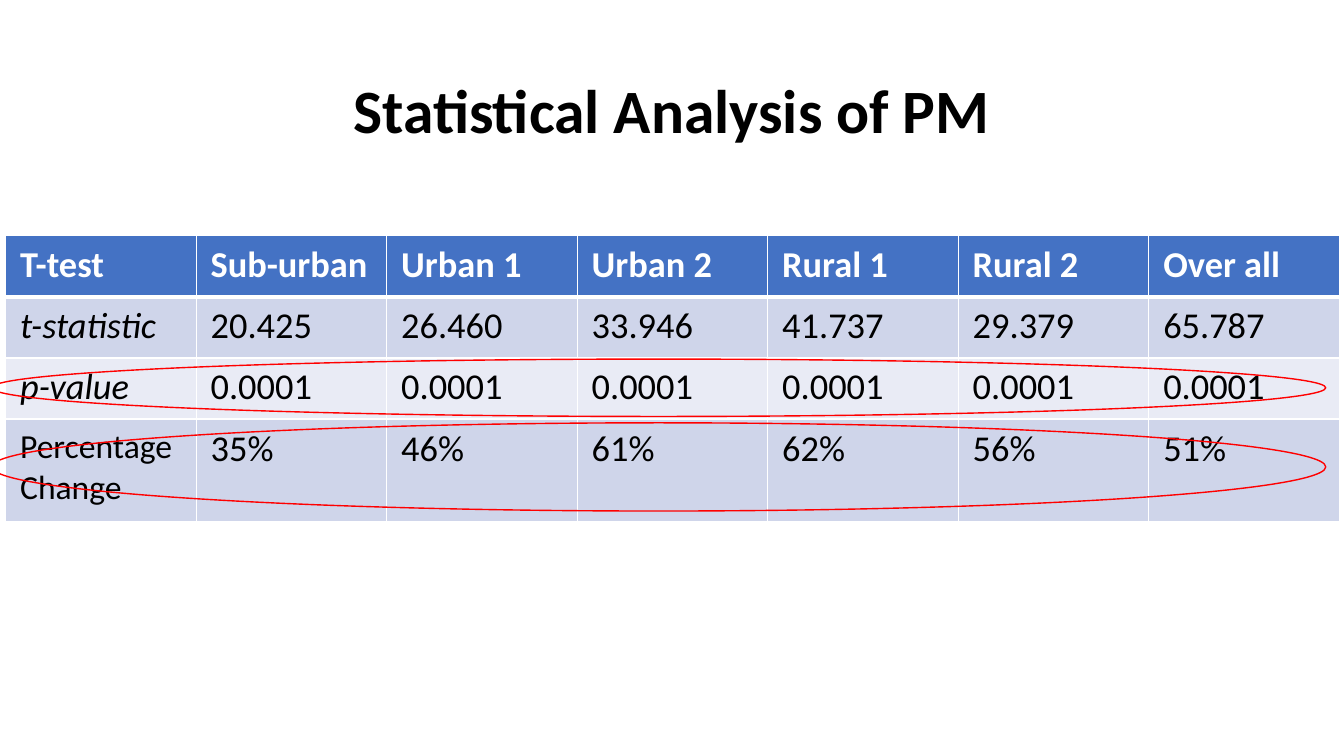
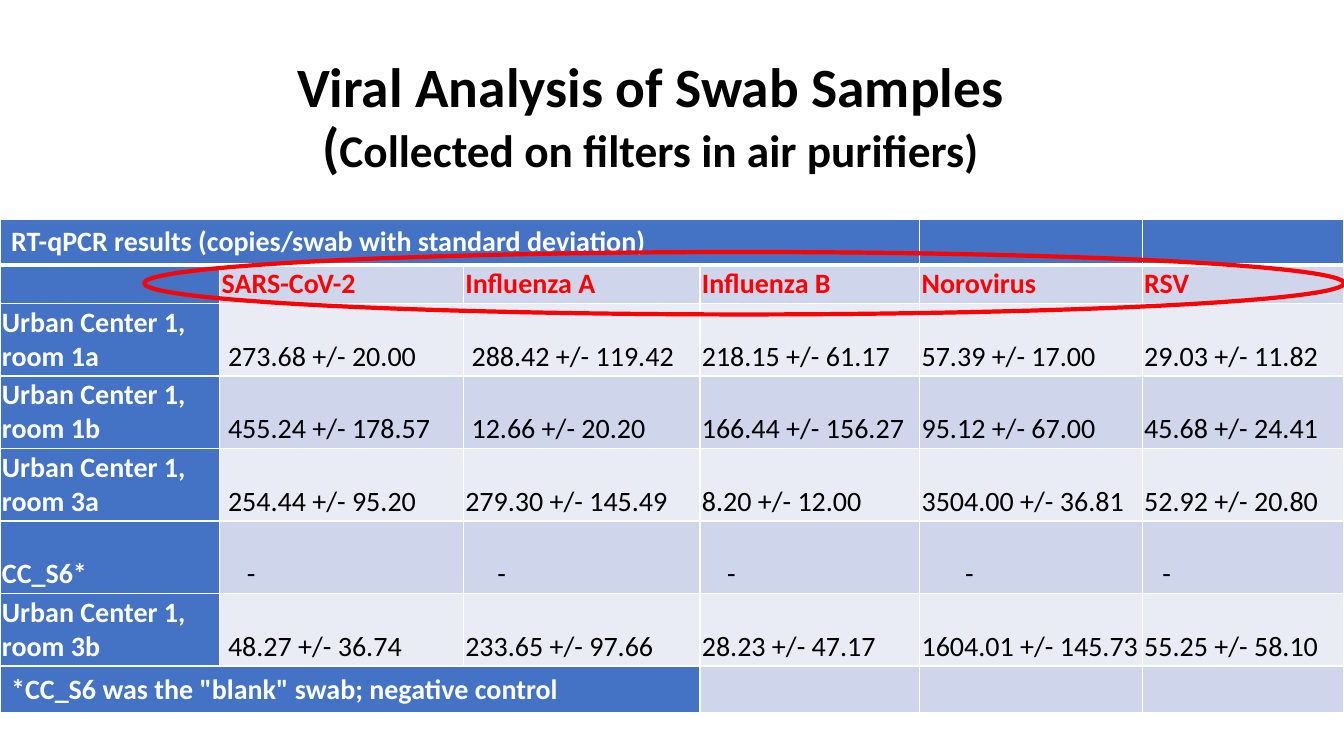
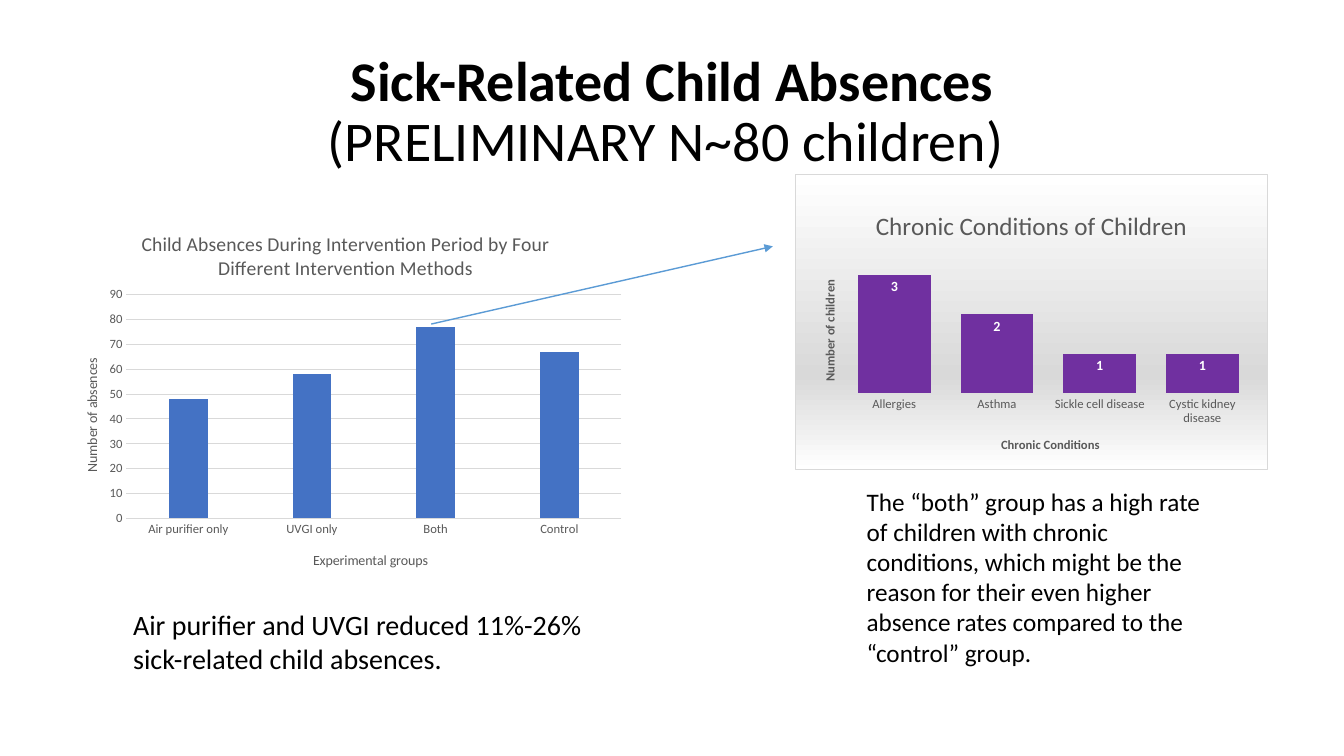
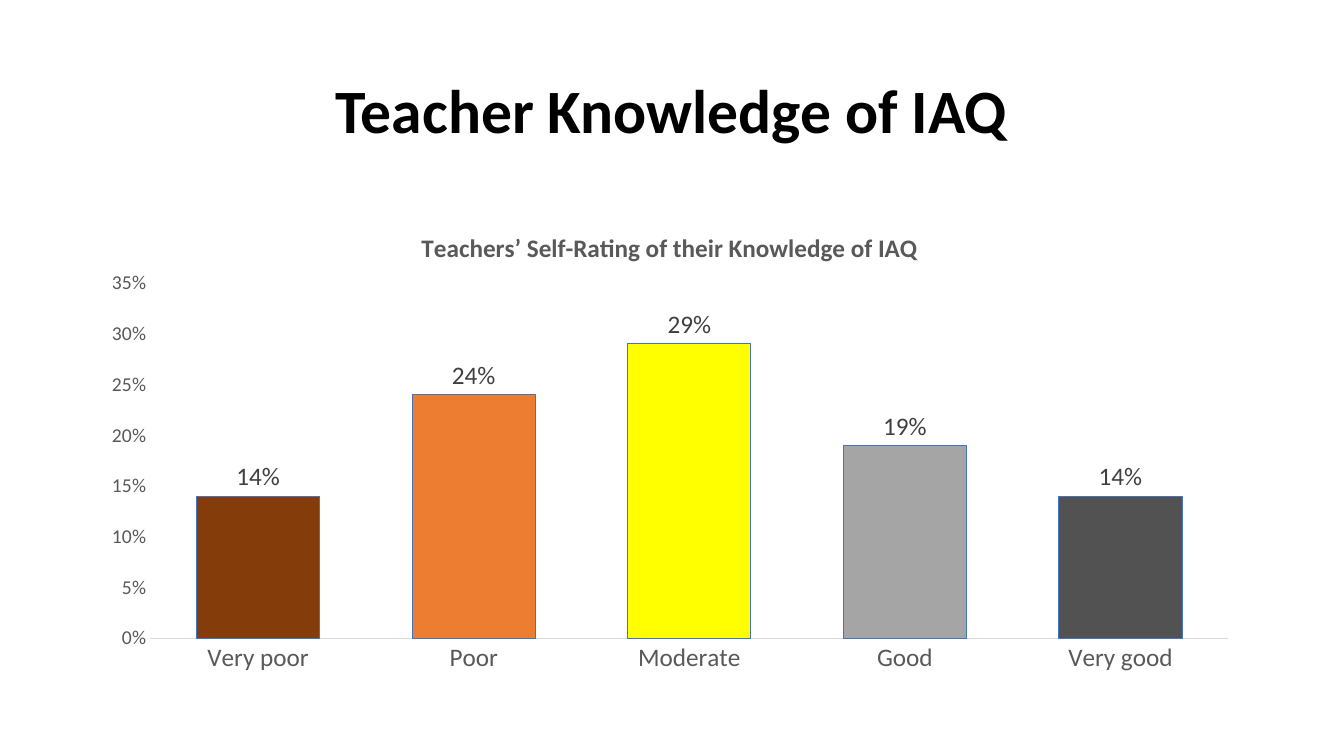
from lxml.etree import SubElement
from pptx import Presentation
from pptx.chart.data import CategoryChartData
from pptx.dml.color import RGBColor
from pptx.enum.chart import XL_CHART_TYPE as ChartType, XL_LABEL_POSITION as LabelPos, XL_TICK_MARK as Tick
from pptx.enum.shapes import MSO_CONNECTOR as Connector, MSO_SHAPE as Shape
from pptx.enum.text import MSO_ANCHOR as Anchor, MSO_AUTO_SIZE as AutoSize, PP_ALIGN as Align
from pptx.oxml import parse_xml
from pptx.oxml.ns import nsdecls, qn
from pptx.util import Pt

FONT = "Calibri"
BLACK, WHITE, RED = "000000", "FFFFFF", "FF0000"
BLUE, BAND_DARK, BAND_LIGHT = "4472C4", "CFD5EA", "E9EBF5"
GREY, RULE, ARROW, PURPLE = "595959", "D9D9D9", "5B9BD5", "7030A0"
TITLE_BOX = (66, 29, 828, 104)


def rgb(code):
    """Turn a hex string into a colour."""
    return RGBColor.from_string(code)


def points(*lengths):
    """Turn numbers into point lengths."""
    return [Pt(length) for length in lengths]


def style_font(font, size, color, bold=False, italic=False):
    """Give a font the deck's typeface, with size, colour and weight."""
    font.name, font.size = FONT, Pt(size)
    font.bold, font.italic = bold, italic
    font.color.rgb = rgb(color)


def add_run(paragraph, text, size, color=BLACK, bold=False, italic=False):
    """Append one formatted run."""
    run = paragraph.add_run()
    run.text = text
    style_font(run.font, size, color, bold, italic)


def add_titled_slide(deck, lines, box=TITLE_BOX):
    """Add a slide whose title is made of lines of (text, size, bold) runs."""
    slide = deck.slides.add_slide(deck.slide_layouts[5])
    title = slide.shapes.title
    title.left, title.top, title.width, title.height = points(*box)
    frame = title.text_frame
    frame.auto_size, frame.vertical_anchor = AutoSize.NONE, Anchor.MIDDLE
    paragraph = frame.paragraphs[0]
    paragraph.alignment, paragraph.line_spacing = Align.CENTER, 0.9
    for index, line in enumerate(lines):
        if index:
            paragraph.add_line_break()
        for text, size, bold in line:
            add_run(paragraph, text, size, bold=bold)
    return slide


def add_note(slide, box, text, size):
    """Add a wrapped text box."""
    frame = slide.shapes.add_textbox(*points(*box)).text_frame
    frame.word_wrap, frame.auto_size = True, AutoSize.SHAPE_TO_FIT_TEXT
    add_run(frame.paragraphs[0], text, size)


def add_ring(slide, box, weight):
    """Add a red ellipse outline."""
    ring = slide.shapes.add_shape(Shape.OVAL, *points(*box))
    ring.shadow.inherit = False
    ring.fill.background()
    ring.line.color.rgb, ring.line.width = rgb(RED), Pt(weight)


def add_arrow(slide, start, end):
    """Add a thin arrow between two points."""
    arrow = slide.shapes.add_connector(Connector.STRAIGHT, *points(*start, *end))
    arrow.line.color.rgb, arrow.line.width = rgb(ARROW), Pt(1)
    SubElement(arrow.line._get_or_add_ln(), qn("a:tailEnd"), type="triangle")
    SubElement(arrow._element.spPr, qn("a:effectLst"))


def add_grid(slide, left, top, widths, heights):
    """Add an unstyled table with the given column widths and row heights."""
    table = slide.shapes.add_table(len(heights), len(widths),
                                   *points(left, top, sum(widths), sum(heights))).table
    table.first_row = table.horz_banding = False
    for column, width in zip(table.columns, widths):
        column.width = Pt(width)
    for row, height in zip(table.rows, heights):
        row.height = Pt(height)
    return table


def paint_cell(cell, fill, inset, bottom=1):
    """Set a cell's white borders, fill and insets."""
    properties = cell._tc.get_or_add_tcPr()
    for side, weight in (("L", 1), ("R", 1), ("T", 1), ("B", bottom)):
        properties.append(parse_xml(
            f'<a:ln{side} {nsdecls("a")} w="{Pt(weight)}"><a:solidFill>'
            f'<a:srgbClr val="{WHITE}"/></a:solidFill></a:ln{side}>'))
    cell.fill.solid()
    cell.fill.fore_color.rgb = rgb(fill)
    across, down = points(*inset)
    cell.margin_left = cell.margin_right = across
    cell.margin_top = cell.margin_bottom = down


def write_cell(cell, text, size, color, bold=False, italic=False, indent=0):
    """Write a cell's text, if it has any."""
    if text:
        paragraph = cell.text_frame.paragraphs[0]
        if indent:
            paragraph._p.get_or_add_pPr().set("marL", str(Pt(indent)))
        add_run(paragraph, text, size, color, bold, italic)


def band(row):
    """Return the fill of a body row."""
    return BAND_DARK if row % 2 else BAND_LIGHT


def set_layout(parent, index, x, y, size=None):
    """Place a chart part by fractions of the chart's area."""
    for old in parent.findall(qn("c:layout")):
        parent.remove(old)
    values = [("xMode", "edge"), ("yMode", "edge"), ("x", x), ("y", y)]
    if size:
        values = [("layoutTarget", "inner"), *values, ("w", size[0]), ("h", size[1])]
    inner = "".join(f'<c:{tag} val="{value}"/>' for tag, value in values)
    parent.insert(index, parse_xml(
        f'<c:layout {nsdecls("c")}><c:manualLayout>{inner}</c:manualLayout></c:layout>'))


def write_chart_title(title, text, size, place, bold=False, upright=False):
    """Write and place the title of a chart or an axis."""
    frame = title.text_frame
    add_run(frame.paragraphs[0], text, size, GREY, bold)
    if upright:
        frame._txBody.bodyPr.set("rot", "-5400000")
        frame._txBody.bodyPr.set("vert", "horz")
    set_layout(title._element, 1, *place)


def set_chart_area(chart, fill="<a:noFill/>", outline="<a:noFill/>"):
    """Set the chart area's fill and outline."""
    chart._chartSpace.find(qn("c:chart")).addnext(parse_xml(
        f'<c:spPr {nsdecls("c", "a")}>{fill}<a:ln w="{Pt(0.75)}">{outline}</a:ln></c:spPr>'))


def add_columns(slide, box, categories, values, plot, gap, color, scale, number_format="General"):
    """Add a column chart with plain axes and a fixed plot area."""
    data = CategoryChartData(number_format=number_format)
    data.categories = categories
    data.add_series("Series 1", values)
    chart = slide.shapes.add_chart(ChartType.COLUMN_CLUSTERED, *points(*box), data).chart
    style_font(chart.font, 10, BLACK)
    chart.has_legend, chart.has_title = False, True
    columns = chart.plots[0]
    columns.gap_width, columns.vary_by_categories = gap, False
    series_fill = columns.series[0].format.fill
    series_fill.solid()
    series_fill.fore_color.rgb = rgb(color)
    for axis in (chart.category_axis, chart.value_axis):
        axis.major_tick_mark = axis.minor_tick_mark = Tick.NONE
        axis.has_major_gridlines = False
        style_font(axis.tick_labels.font, 9, GREY)
    chart.category_axis.format.line.color.rgb = rgb(RULE)
    chart.category_axis.format.line.width = Pt(0.75)
    value_axis = chart.value_axis
    value_axis.format.line.fill.background()
    value_axis.minimum_scale = 0
    value_axis.maximum_scale, value_axis.major_unit = scale
    x, y, *size = plot
    set_layout(chart._chartSpace.chart.plotArea, 0, x, y, size)
    return chart


def add_value_labels(chart, size, color, position, number_format, bold=False):
    """Show each column's value."""
    columns = chart.plots[0]
    columns.has_data_labels = True
    labels = columns.data_labels
    labels.show_value, labels.position = True, position
    labels.number_format, labels.number_format_is_linked = number_format, False
    style_font(labels.font, size, color, bold)


def build_statistics(deck):
    """Build the slide on the t-test of PM."""
    slide = add_titled_slide(deck, [[("Statistical Analysis of PM", 44, True)]])
    rows = [
        ("T-test", "Sub-urban", "Urban 1", "Urban 2", "Rural 1", "Rural 2", "Over all"),
        ("t-statistic", "20.425", "26.460", "33.946", "41.737", "29.379", "65.787"),
        ("p-value", *["0.0001"] * 6),
        ("Percentage Change", "35%", "46%", "61%", "62%", "56%", "51%"),
    ]
    table = add_grid(slide, 4, 168.5, [136.1] * 7, [43.6] * 3 + [73])
    for r, row in enumerate(rows):
        for c, text in enumerate(row):
            cell, header = table.cell(r, c), r == 0
            paint_cell(cell, BLUE if header else band(r), (10.4, 5.2), 3 if header else 1)
            write_cell(cell, text, 24 if (r, c) == (3, 0) else 26, WHITE if header else BLACK,
                       header, c == 0 and r in (1, 2))
    for top, height in ((302, 63), (256.5, 41)):
        add_ring(slide, (-6, top, 953, height), 1)


def build_viral(deck):
    """Build the slide on the viral analysis."""
    slide = add_titled_slide(
        deck,
        [[("Viral Analysis of Swab Samples", 39.6, True)],
         [("(", 39.6, True), ("Collected on filters in air purifiers)", 32.4, True)]],
        (0, 37.5, 929.5, 96))
    flush = (0,) * 6
    spaced = (0, 4.5, 4.5, 0, 0, 0)
    first_spaced = (0, 4.5, 0, 0, 0, 0)
    rows = [
        (31.2, flush, ("RT-qPCR results (copies/swab with standard deviation)", "", "", "", "", "")),
        (27.2, flush, ("", "SARS-CoV-2", "Influenza A", "Influenza B", "Norovirus", "RSV")),
        (51.8, spaced, ("Urban Center 1, room 1a", "273.68 +/- 20.00", "288.42 +/- 119.42",
                        "218.15 +/- 61.17", "57.39 +/- 17.00", "29.03 +/- 11.82")),
        (51.8, spaced, ("Urban Center 1, room 1b", "455.24 +/- 178.57", "12.66 +/- 20.20",
                        "166.44 +/- 156.27", "95.12 +/- 67.00", "45.68 +/- 24.41")),
        (51.8, first_spaced, ("Urban Center 1, room 3a", "254.44 +/- 95.20", "279.30 +/- 145.49",
                              "8.20 +/- 12.00", "3504.00 +/- 36.81", "52.92 +/- 20.80")),
        (51.8, (0, 18, 23, 18, 31, 13), ("CC_S6*", "-", "-", "-", "-", "-")),
        (51.8, first_spaced, ("Urban Center 1, room 3b", "48.27 +/- 36.74", "233.65 +/- 97.66",
                              "28.23 +/- 47.17", "1604.01 +/- 145.73", "55.25 +/- 58.10")),
        (33.6, flush, ('*CC_S6 was the "blank" swab; negative control', "", "", "", "", "")),
    ]
    last = len(rows) - 1
    table = add_grid(slide, 0, 156.4, [157, 174, 169, 157, 159, 144], [row[0] for row in rows])
    table.cell(0, 0).merge(table.cell(0, 3))
    table.cell(last, 0).merge(table.cell(last, 2))
    for r, (_, indents, texts) in enumerate(rows):
        for c, text in enumerate(texts):
            cell, header = table.cell(r, c), r == 0 or c == 0
            paint_cell(cell, BLUE if header else band(r),
                       (8, 4.3) if r in (0, last) else (1.4, 1.4), 1 if r else 3)
            cell.vertical_anchor = Anchor.BOTTOM
            color = WHITE if header else RED if r == 1 else BLACK
            write_cell(cell, text, 20, color, header or r == 1, indent=indents[c])
    add_ring(slide, (103, 180, 857, 44.6), 3)


def build_absences(deck):
    """Build the slide on child absences."""
    slide = add_titled_slide(deck, [[("Sick-Related Child Absences", 40, True)],
                                    [("(PRELIMINARY N~80 children) ", 40, False)]])
    absences = add_columns(
        slide, (41, 148.3, 411, 270.7), ("Air purifier only", "UVGI only", "Both", "Control"),
        (48, 58, 77, 67), (0.12, 0.23, 0.86, 0.59), 219, BLUE, (90, 10))
    absences.plots[0].overlap = -27
    set_chart_area(absences)
    absences.value_axis.has_major_gridlines = True
    gridline = absences.value_axis.major_gridlines.format.line
    gridline.color.rgb, gridline.width = rgb(RULE), Pt(0.75)
    write_chart_title(absences.chart_title, "Child Absences During Intervention Period by Four "
                      "Different Intervention Methods", 14, (0.14, 0.05))
    write_chart_title(absences.category_axis.axis_title, "Experimental groups", 10, (0.44, 0.9))
    write_chart_title(absences.value_axis.axis_title, "Number of absences", 10, (0.04, 0.39),
                      upright=True)

    conditions = add_columns(
        slide, (568, 124, 338, 212),
        ("Allergies", "Asthma", "Sickle cell disease", "Cystic kidney disease"),
        (3, 2, 1, 1), (0.1, 0.21, 0.87, 0.53), 41, PURPLE, (4, 1))
    stops = "".join(f'<a:gs pos="{share}000"><a:srgbClr val="{color}"/></a:gs>'
                    for share, color in ((0, WHITE), (68, RULE), (100, WHITE)))
    set_chart_area(conditions,
                   f'<a:gradFill><a:gsLst>{stops}</a:gsLst><a:lin ang="5400000" scaled="0"/></a:gradFill>',
                   f'<a:solidFill><a:srgbClr val="{RULE}"/></a:solidFill>')
    conditions.category_axis.format.line.fill.background()
    conditions.value_axis.visible = False
    add_value_labels(conditions, 10, WHITE, LabelPos.INSIDE_END, "General", True)
    write_chart_title(conditions.chart_title, "Chronic Conditions of Children", 18, (0.16, 0.1))
    write_chart_title(conditions.category_axis.axis_title, "Chronic Conditions", 9, (0.43, 0.88), True)
    write_chart_title(conditions.value_axis.axis_title, "Number of children", 9, (0.05, 0.35),
                      True, upright=True)

    add_arrow(slide, (308, 231.5), (552, 176))
    add_note(slide, (612, 343.5, 268.5, 138),
             "The “both” group has a high rate of children with chronic conditions, which might be "
             "the reason for their even higher absence rates compared to the “control” group.", 18)
    add_note(slide, (88, 430.5, 346, 55.5),
             "Air purifier and UVGI reduced 11%-26% sick-related child absences.", 20)


def build_knowledge(deck):
    """Build the slide on teacher knowledge."""
    slide = add_titled_slide(deck, [[("Teacher Knowledge of IAQ", 44, True)]])
    ratings = add_columns(
        slide, (66, 144, 828, 342.7), ("Very poor", "Poor", "Moderate", "Good", "Very good"),
        (0.14, 0.24, 0.29, 0.19, 0.14), (0.05, 0.17, 0.93, 0.74), 75, BLUE, (0.35, 0.05), "0%")
    set_chart_area(ratings)
    ratings.category_axis.tick_labels.font.size = Pt(18)
    labels = ratings.value_axis.tick_labels
    labels.font.size = Pt(14)
    labels.number_format, labels.number_format_is_linked = "0%", False
    for index, color in enumerate(("843C0B", "ED7D31", "FFFF00", "A5A5A5", "525252")):
        column = ratings.plots[0].series[0].points[index].format
        column.fill.solid()
        column.fill.fore_color.rgb = rgb(color)
        column.line.color.rgb, column.line.width = rgb(BLUE), Pt(0.75)
    add_value_labels(ratings, 18, "404040", LabelPos.OUTSIDE_END, "0%")
    write_chart_title(ratings.chart_title, "Teachers’ Self-Rating of their Knowledge of IAQ", 18,
                      (0.28, 0.05), True)


def main():
    """Build the deck and save it."""
    deck = Presentation()
    deck.slide_width, deck.slide_height = points(960, 540)
    for build in (build_statistics, build_viral, build_absences, build_knowledge):
        build(deck)
    deck.save("out.pptx")


if __name__ == "__main__":
    main()
